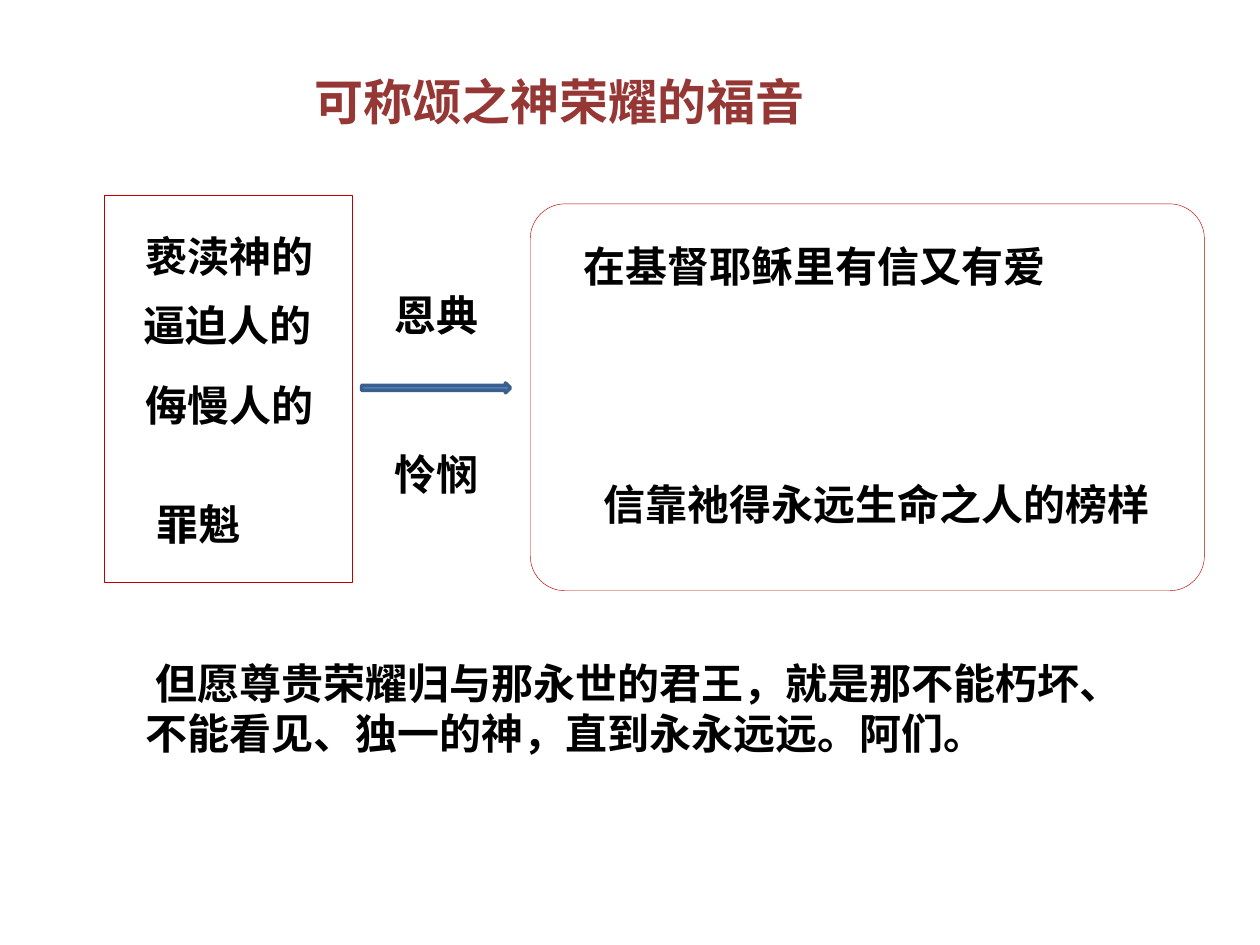
from pptx import Presentation
from pptx.dml.color import RGBColor
from pptx.enum.shapes import MSO_SHAPE
from pptx.enum.text import MSO_AUTO_SIZE
from pptx.util import Cm, Pt


def color(code):
    return RGBColor.from_string(code)


def write(text, left, top, width, height=1.27, size=24, ink="000000",
          font="Calibri", wrap=False):
    """Add a bold text box, placed in centimetres, and return its paragraph."""
    box = slide.shapes.add_textbox(Cm(left), Cm(top), Cm(width), Cm(height))
    frame = box.text_frame
    frame.word_wrap = wrap
    frame.auto_size = MSO_AUTO_SIZE.SHAPE_TO_FIT_TEXT
    para = frame.paragraphs[0]
    para.text = text
    para.font.size = Pt(size)
    para.font.bold = True
    para.font.name = font
    para.font.color.rgb = color(ink)
    return para


deck = Presentation()
deck.slide_width, deck.slide_height = Cm(25.4), Cm(19.05)
slide = deck.slides.add_slide(deck.slide_layouts[6])

# Title
write("可称颂之神荣耀的福音", 6.1, 1.32, 10.54, 1.45, size=28,
      ink="953735", font="Noto Sans CJK SC")

# Frames and arrow
frames = [
    (MSO_SHAPE.RECTANGLE, 2.11, 3.94, 5, 7.8, None, "C00000", 0.5),
    (MSO_SHAPE.ROUNDED_RECTANGLE, 10.69, 4.11, 13.59, 7.8, None, "C00000", 0.25),
    (MSO_SHAPE.RIGHT_ARROW, 7.29, 7.72, 3, 0.2, "4F81BD", "3A5F8C", 2),
]
for kind, left, top, width, height, fill, line, weight in frames:
    shape = slide.shapes.add_shape(kind, Cm(left), Cm(top), Cm(width), Cm(height))
    shape.shadow.inherit = False
    if fill:
        shape.fill.solid()
        shape.fill.fore_color.rgb = color(fill)
    else:
        shape.fill.background()
    shape.line.color.rgb = color(line)
    shape.line.width = Pt(weight)
    if kind == MSO_SHAPE.ROUNDED_RECTANGLE:
        shape.adjustments[0] = 0.09

# Before, mercy, after
labels = [
    ("亵渎神的", 2.69, 4.52, 3.94),
    ("逼迫人的", 2.64, 5.92, 3.94),
    ("侮慢人的", 2.69, 7.52, 3.94),
    ("罪魁", 2.9, 9.93, 2.24),
    ("恩典", 7.7, 5.72, 2.24),
    ("怜悯", 7.7, 8.92, 2.24),
    ("在基督耶稣里有信又有爱", 11.51, 4.72, 9.91),
    ("信靠祂得永远生命之人的榜样", 11.91, 9.53, 11.63),
]
for label in labels:
    write(*label)

# Closing praise, with a slight first-line indent
praise = write("但愿尊贵荣耀归与那永世的君王，就是那不能朽坏、"
               "不能看见、独一的神，直到永永远远。阿们。",
               2.69, 13.13, 20.19, 2.31, wrap=True)
props = praise._p.get_or_add_pPr()
props.set("marL", "0")
props.set("indent", str(Cm(0.19)))

deck.save("out.pptx")
